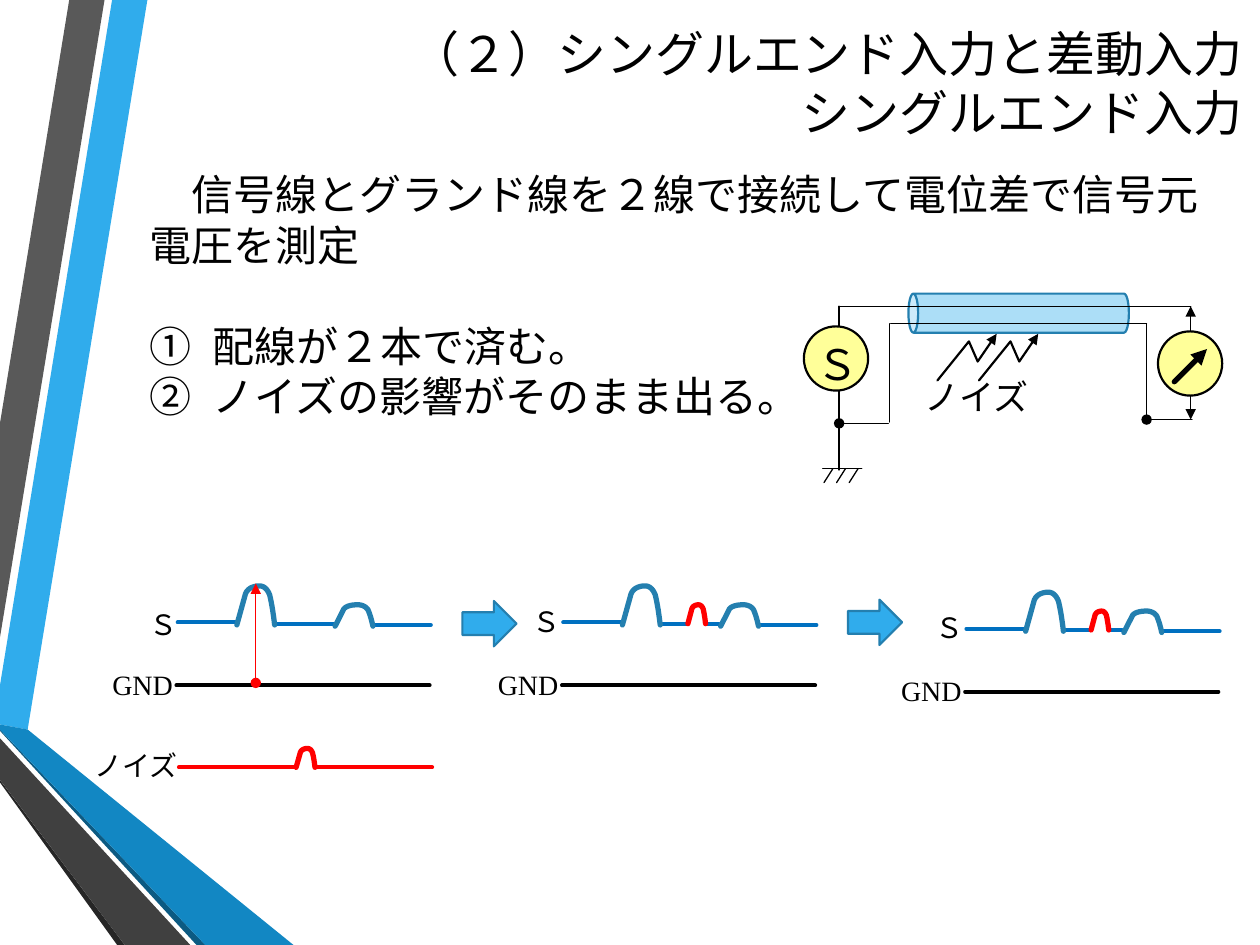
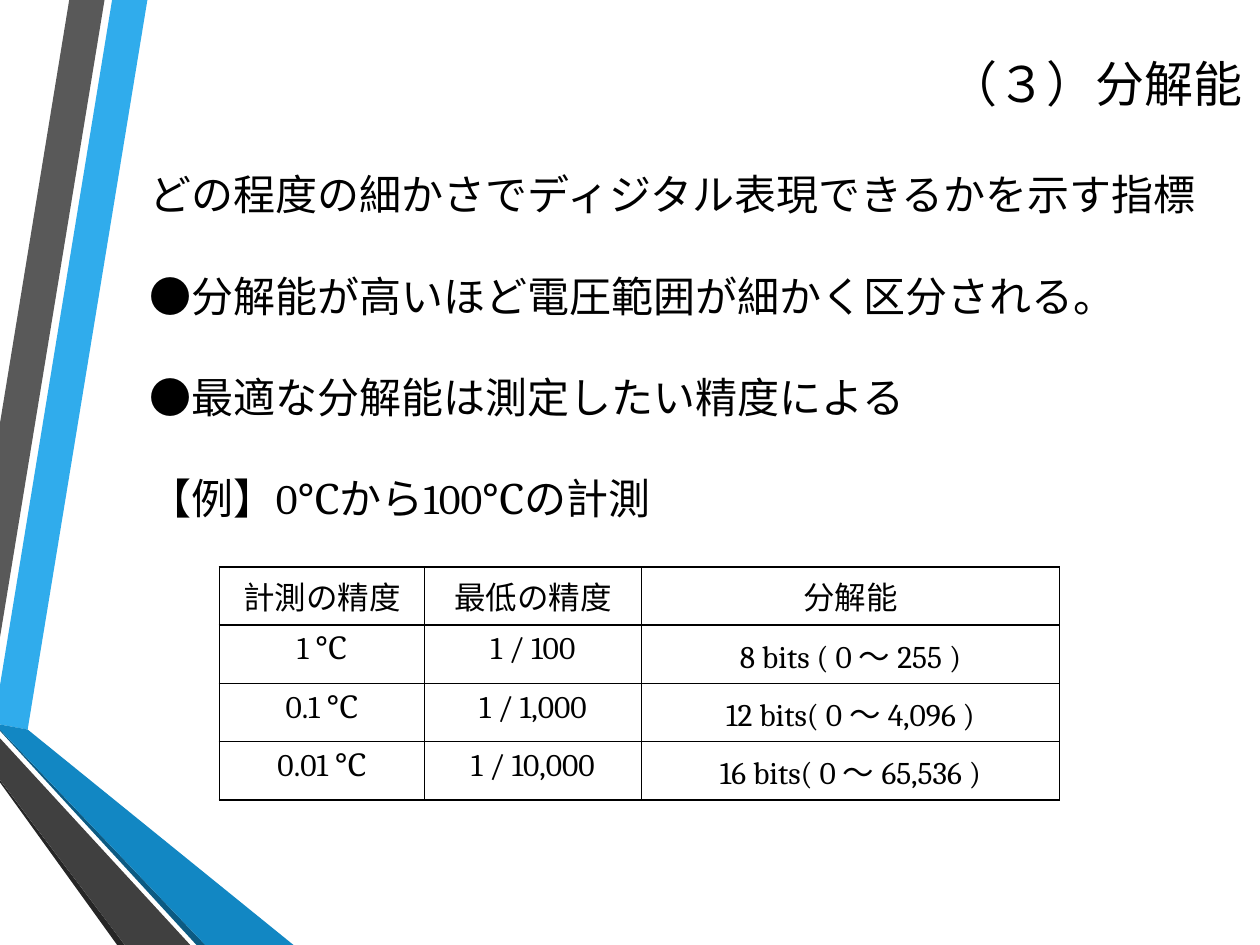
from lxml import etree
from pptx import Presentation
from pptx import util as u
from pptx.dml.color import RGBColor
from pptx.enum import shapes, text
from pptx.oxml import ns

PX = 9144  # EMU, 100 px to the inch
KIND = shapes.MSO_SHAPE
LEFT, MID, RIGHT = text.PP_ALIGN.LEFT, text.PP_ALIGN.CENTER, text.PP_ALIGN.RIGHT
SANS, SERIF, TIMES = "Cabin", "Cambria", "Times New Roman"
HUE = {
    "black": "000000", "white": "FFFFFF", "sky": "30ACEC", "blue": "1287C3",
    "navy": "0C5A82", "gray": "595959", "dark": "404040", "coal": "262626",
    "edge": "247FAF", "wire": "0070C0", "red": "FF0000", "pale": "ACDEF7",
    "cream": "FFFF99",
}
BANDS = [
    ("sky", [(0, 544), (0, 575), (22, 579), (117, 0), (89, 0)]),
    ("gray", [(83, 0), (55, 0), (0, 336), (0, 506)]),
    ("coal", [(0, 619), (0, 621), (93, 750), (99, 750)]),
    ("navy", [(0, 579), (0, 580), (156, 750), (163, 750)]),
    ("blue", [(0, 579), (163, 750), (233, 750), (22, 579), (0, 575)]),
    ("dark", [(0, 619), (99, 750), (151, 750), (0, 586)]),
]
# Pulse outline in a unit box: a straight flank, then cubic curves
FLANK = [(0, 1), (0.23, 0.2)]
CURVES = [
    [(0.3, 0.03), (0.5, 0), (0.6, 0)],
    [(0.7, 0), (0.8, 0.06), (0.87, 0.23)],
    [(0.93, 0.48), (0.97, 0.74), (1, 1)],
]


def emu(*vals):
    return [u.Emu(round(v * PX)) for v in vals]


def rgb(hue):
    return RGBColor.from_string(HUE[hue])


def put(obj, **vals):
    for key, val in vals.items():
        setattr(obj, key, val)


def sub(node, tag, **vals):
    return etree.SubElement(node, ns.qn(tag), **vals)


def font(run, size, face):
    put(run.font, size=u.Pt(size), name=face)
    run.font.color.rgb = rgb("black")


def paint(shape, fill=None, line=None, width=1.25):
    shape.shadow.inherit = False
    if fill:
        shape.fill.solid()
        shape.fill.fore_color.rgb = rgb(fill)
    else:
        shape.fill.background()
    if line:
        ink(shape, line, width)
    else:
        shape.line.fill.background()


def ink(shape, hue, width, head=None, tail=None):
    """Set line colour, width, round caps and end marks."""
    shape.line.color.rgb = rgb(hue)
    shape.line.width = u.Pt(width)
    ln = shape.line._get_or_add_ln()
    ln.set("cap", "rnd")
    for tag, mark in (("a:headEnd", head), ("a:tailEnd", tail)):
        if mark:
            sub(ln, tag, type=mark)


def wire(slide, ends, hue="black", width=0.75, head=None, tail=None):
    link = slide.shapes.add_connector(shapes.MSO_CONNECTOR.STRAIGHT, *emu(*ends))
    ink(link, hue, width, head, tail)
    sub(link._element.spPr, "a:effectLst")


def shape(slide, kind, box, **look):
    item = slide.shapes.add_shape(kind, *emu(*box))
    paint(item, **look)
    return item


def outline(slide, pts, close=False, **look):
    pts = [emu(*pt) for pt in pts]
    build = slide.shapes.build_freeform(*pts[0])
    build.add_line_segments(pts[1:], close=close)
    item = build.convert_to_shape()
    paint(item, **look)
    return item


def curve(pts, steps=8):
    """Sample one cubic curve, leaving out its first point."""
    out = []
    for i in range(1, steps + 1):
        t = i / steps
        mix = [(1 - t) ** 3, 3 * t * (1 - t) ** 2, 3 * t * t * (1 - t), t ** 3]
        out.append(tuple(sum(m * p[k] for m, p in zip(mix, pts)) for k in (0, 1)))
    return out


def pulse(slide, box, line="edge", fill=None):
    unit = list(FLANK)
    for part in CURVES:
        unit += curve([unit[-1]] + part)
    x, y, w, h = box
    outline(slide, [(x + w * a, y + h * b) for a, b in unit],
            fill=fill, line=line, width=3)


def label(slide, box, words, size=16, face=TIMES, align=RIGHT):
    frame = slide.shapes.add_textbox(*emu(*box)).text_frame
    frame.word_wrap = True
    para = frame.paragraphs[0]
    para.alignment = align
    run = para.add_run()
    run.text = words
    font(run, size, face)


def place(holder, box, anchor):
    """Move a placeholder and return its text frame."""
    put(holder, **dict(zip(("left", "top", "width", "height"), emu(*box))))
    put(holder.text_frame, word_wrap=True, vertical_anchor=anchor,
        auto_size=text.MSO_AUTO_SIZE.NONE)
    return holder.text_frame


def start(deck, title):
    """Add a slide with the side bands and its title."""
    slide = deck.slides.add_slide(deck.slide_layouts[1])
    for hue, pts in BANDS:
        outline(slide, pts, close=True, fill=hue)
    frame = place(slide.shapes.title, (153, -1, 843, 133), text.MSO_ANCHOR.MIDDLE)
    frame.text = title
    para = frame.paragraphs[0]
    para.alignment = RIGHT
    for run in para.runs:
        font(run, 28, SANS)
    return slide


def body(slide, height, rows):
    """Fill the body; a row is (runs, space before, numbered)."""
    frame = place(slide.placeholders[1], (109, 129, 858, height),
                  text.MSO_ANCHOR.TOP)
    for i, (runs, gap, count) in enumerate(rows):
        para = frame.add_paragraph() if i else frame.paragraphs[0]
        para.space_before = u.Pt(gap)
        props = para._p.get_or_add_pPr()
        dent = 50 * PX if count else 0
        props.set("marL", str(dent))
        props.set("indent", str(-dent))
        if count:
            sub(props, "a:buFont", typeface="+mj-lt")
            sub(props, "a:buAutoNum", type="circleNumDbPlain")
        else:
            sub(props, "a:buNone")
        for words, face in runs:
            run = para.add_run()
            run.text = words
            font(run, 24, face)


def trace(slide, x, y, noisy):
    """Draw one signal over its ground line."""
    for i in range(3):
        left = x + 77.5 * i
        wire(slide, (left, y + i, left + 46, y + i), "wire", 2.25)
    pulse(slide, (x + 47, y - 29, 30, 31))
    pulse(slide, (x + 125, y - 14, 30, 17))
    wire(slide, (x - 1, y + 50, x + 200, y + 50), width=2.25)
    label(slide, (x - 80, y + 31, 86, 37), "GND")
    if noisy:
        shape(slide, KIND.RECTANGLE, (x + 99, y - 2, 14, 8), fill="white")
        pulse(slide, (x + 99, y - 14, 14, 15), "red", "white")


def circuit(slide):
    can = shape(slide, KIND.CAN, (793, 161, 31, 175), fill="pale", line="edge")
    can.rotation = 270
    wire(slide, (653, 372, 684, 372))
    for x in (661, 671, 681):
        wire(slide, (x, 372, x - 7, 383))
    for ends in [(666, 243, 666, 373), (706, 257, 706, 335), (707, 257, 910, 257),
                 (910, 257, 910, 335), (666, 243, 945, 243)]:
        wire(slide, ends)
    for ends in [(666, 336, 705, 336), (910, 333, 946, 333)]:
        wire(slide, ends, head="oval")
    wire(slide, (945, 243, 945, 333), head="triangle", tail="triangle")
    for box in [(638, 259, 51, 51), (919, 263, 51, 51)]:
        shape(slide, KIND.OVAL, box, fill="cream", line="black")
    label(slide, (638, 264, 52, 50), "Ｓ", 24, SANS, LEFT)
    wire(slide, (932, 303, 958, 277), width=3, tail="triangle")
    for x in (744, 777):
        bolt = outline(slide, [(x, 302), (x + 25, 271), (x + 32, 287), (x + 47, 265)])
        ink(bolt, "black", 1.25, tail="triangle")
    label(slide, (706, 293, 120, 44), "ノイズ", 20)


def single(deck):
    slide = start(deck, "（２）シングルエンド入力と差動入力\vシングルエンド入力")
    body(slide, 212, [
        ([("\u3000信号線とグランド線を２線で接続して電位差で信号元電圧を測定".replace("\u3000", "　"), SANS)], 0, False),
        ([("配線が２本で済む。", SANS)], 29, True),
        ([("ノイズの影響がそのまま出る。", SANS)], 0, True),
    ])
    circuit(slide)
    for x, y, sx, sy, noisy in [(141, 494, 109, 477, False),
                                (447, 494, 413, 475, True),
                                (767, 499, 733, 480, True)]:
        trace(slide, x, y, noisy)
        label(slide, (sx, sy, 52, 37), "Ｓ", align=LEFT)
    wire(slide, (203, 542, 203, 463), "red", head="oval", tail="triangle")
    for x in (142, 250):
        wire(slide, (x, 609, x + 93, 609), "red", 2.25)
    pulse(slide, (235, 594, 15, 15), "red")
    label(slide, (31, 589, 120, 37), "ノイズ")
    for x, y in [(367, 477), (673, 476)]:
        shape(slide, KIND.RIGHT_ARROW, (x, y, 43, 36), fill="sky", line="edge")


def frame_cell(cell):
    cell.fill.background()
    props = cell._tc.get_or_add_tcPr()
    for i, side in enumerate("LRTB"):
        ln = etree.Element(ns.qn("a:ln" + side), w=str(u.Pt(1)))
        sub(sub(ln, "a:solidFill"), "a:srgbClr", val=HUE["black"])
        props.insert(i, ln)


def grid(slide, box, widths, rows):
    table = slide.shapes.add_table(len(rows), len(widths), *emu(*box)).table
    put(table, first_row=False, horz_banding=False)
    for col, width in zip(table.columns, emu(*widths)):
        col.width = width
    for r, row in enumerate(rows):
        for c, words in enumerate(row):
            cell = table.cell(r, c)
            cell.text = words
            para = cell.text_frame.paragraphs[0]
            para.alignment = MID
            font(para.runs[0], 18, SERIF)
            frame_cell(cell)


def bits(deck):
    slide = start(deck, "（３）分解能")
    body(slide, 333, [
        ([("どの程度の細かさでディジタル表現できるかを示す指標", SANS)], 0, False),
        ([("●分解能が高いほど電圧範囲が細かく区分される。", SANS)], 29, False),
        ([("●最適な分解能は測定したい精度による", SANS)], 29, False),
        ([("【例】", SANS), ("0℃から100℃の計測", SERIF)], 29, False),
    ])
    grid(slide, (174, 450, 667, 162), (163, 172, 332), [
        ("計測の精度", "最低の精度", "分解能"),
        ("1 ℃", "1 / 100", "8 bits ( 0 ～ 255 )"),
        ("0.1 ℃", "1 / 1,000", "12 bits( 0 ～ 4,096 )"),
        ("0.01 ℃", "1 / 10,000", "16 bits( 0 ～ 65,536 )"),
    ])


def main():
    deck = Presentation()
    deck.slide_width, deck.slide_height = emu(1000, 750)
    single(deck)
    bits(deck)
    deck.save("out.pptx")


if __name__ == "__main__":
    main()
